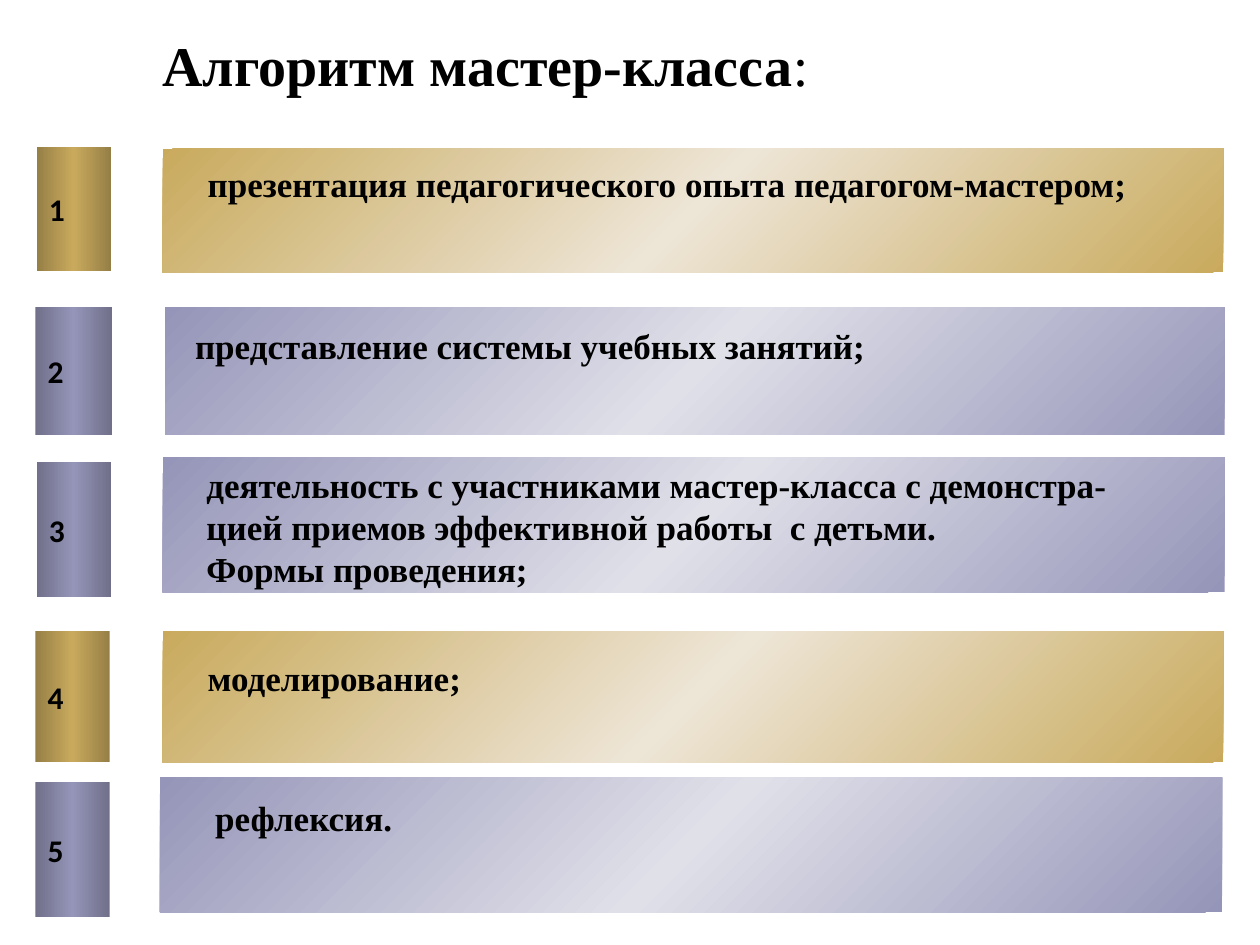
from copy import deepcopy
from dataclasses import dataclass

from pptx import Presentation
from pptx.dml.color import RGBColor
from pptx.enum.shapes import MSO_SHAPE
from pptx.enum.text import MSO_ANCHOR, PP_ALIGN
from pptx.util import Inches, Pt


@dataclass(frozen=True)
class Theme:
    # Gradient colours: (tab edge, main, bar centre)
    gold: tuple = ("967F46", "C9AA5D", "EDE5D6")
    violet: tuple = ("70708A", "9595B9", "E0E0E9")
    ink: str = "000000"
    serif: str = "Times New Roman"
    sans: str = "Calibri"
    title_size: int = 32
    step_size: int = 20
    number_size: int = 18
    step_leading: int = 24


THEME = Theme()

# Content: runs of the title as (text, bold)
TITLE = [("Алгоритм мастер-класса", True), (":", False)]
TITLE_BOX = (1.19, 0.19, 7.01, 0.64)

# Steps: lines, palette, tab (left, top, width), bar (left, top, width),
# shared height, text box
STEPS = [
    (["презентация педагогического опыта педагогом-мастером;"], THEME.gold,
     (0.29, 1.17, 0.59), (1.29, 1.18, 8.42), 0.98, (1.55, 1.24, 7.84, 0.44)),
    (["представление системы учебных занятий;"], THEME.violet,
     (0.28, 2.44, 0.61), (1.31, 2.44, 8.41), 1.01, (1.45, 2.53, 8.03, 0.84)),
    (["деятельность с участниками мастер-класса с демонстра-",
      "цией приемов эффективной работы  с детьми.",
      "Формы проведения;"], THEME.violet,
     (0.29, 3.67, 0.59), (1.29, 3.63, 8.43), 1.07, (1.54, 3.63, 8.08, 1.11)),
    (["моделирование;"], THEME.gold,
     (0.28, 5.01, 0.59), (1.29, 5.01, 8.42), 1.04, (1.55, 5.16, 4.98, 0.44)),
    (["рефлексия."], THEME.violet,
     (0.28, 6.21, 0.59), (1.27, 6.17, 8.43), 1.07, (1.61, 6.27, 4.49, 0.44)),
]


def add_run(paragraph, text, font, size, bold=True):
    run = paragraph.add_run()
    run.text = text
    run.font.name = font
    run.font.size = Pt(size)
    run.font.bold = bold
    run.font.color.rgb = RGBColor.from_string(THEME.ink)


def add_block(slide, box, edge, middle, angle):
    """Rectangle whose gradient runs edge - middle - edge."""
    block = slide.shapes.add_shape(MSO_SHAPE.RECTANGLE, *map(Inches, box))
    block.shadow.inherit = False
    block.line.fill.background()
    block.fill.gradient()
    block.fill.gradient_angle = angle
    stop_list = block.fill._fill._gradFill.gsLst
    stop_list.append(deepcopy(stop_list[-1]))
    for stop, colour, position in zip(
            block.fill.gradient_stops, (edge, middle, edge), (0, 0.5, 1)):
        stop.color.rgb = RGBColor.from_string(colour)
        stop.position = position
    return block


def add_text(slide, box):
    frame = slide.shapes.add_textbox(*map(Inches, box)).text_frame
    frame.word_wrap = True
    return frame


def add_step(slide, number, lines, palette, tab_place, bar_place, height, text_box):
    edge, main, light = palette

    # Wide bar and numbered tab
    add_block(slide, (*bar_place, height), main, light, 315)
    tab = add_block(slide, (*tab_place, height), edge, main, 0)
    tab.text_frame.vertical_anchor = MSO_ANCHOR.MIDDLE
    label = tab.text_frame.paragraphs[0]
    label.alignment = PP_ALIGN.LEFT
    add_run(label, str(number), THEME.sans, THEME.number_size)

    # Step wording
    frame = add_text(slide, text_box)
    for index, line in enumerate(lines):
        paragraph = frame.add_paragraph() if index else frame.paragraphs[0]
        if len(lines) > 1:
            paragraph.alignment = PP_ALIGN.JUSTIFY
            paragraph.line_spacing = Pt(THEME.step_leading)
        add_run(paragraph, line, THEME.serif, THEME.step_size)


def main():
    deck = Presentation()
    deck.slide_width, deck.slide_height = Inches(10), Inches(7.5)
    slide = deck.slides.add_slide(deck.slide_layouts[6])

    # Title
    heading = add_text(slide, TITLE_BOX).paragraphs[0]
    for text, bold in TITLE:
        add_run(heading, text, THEME.serif, THEME.title_size, bold)

    # Numbered steps
    for number, step in enumerate(STEPS, 1):
        add_step(slide, number, *step)

    deck.save("out.pptx")


if __name__ == "__main__":
    main()
